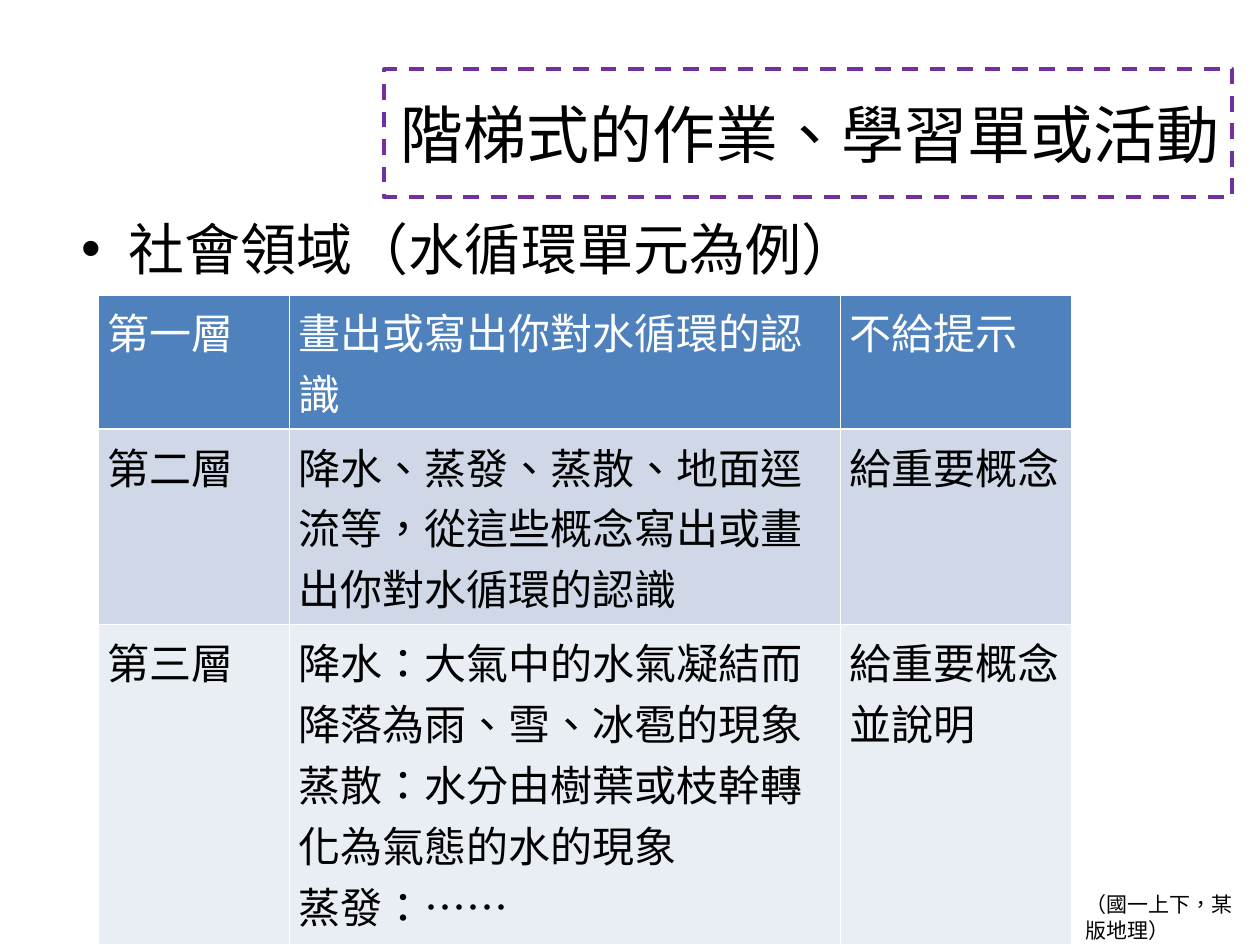
"""Build a slide on tiered assignments with a three-level water cycle table."""
from lxml.etree import SubElement
from pptx import Presentation
from pptx.dml.color import RGBColor
from pptx.enum.dml import MSO_LINE
from pptx.enum.text import MSO_ANCHOR, MSO_AUTO_SIZE, PP_ALIGN
from pptx.oxml.ns import qn
from pptx.util import Inches, Pt

THEME = {
    "font": "Noto Sans CJK SC",
    "note_font": "Arial",
    "title": 36,
    "topic": 32,
    "cell": 24,
    "note": 12,
    "ink": "000000",
    "header_ink": "FFFFFF",
    "frame": "7030A0",
    "fills": ["4F81BD", "D0D8E8", "E9EDF4"],
}


def style_text(frame, size, color=THEME["ink"], font=THEME["font"]):
    """Format every run in a text frame as Traditional Chinese."""
    for para in frame.paragraphs:
        for span in para.runs:
            span.font.size = Pt(size)
            span.font.bold = False
            span.font.name = font
            span.font.color.rgb = RGBColor.from_string(color)
            span.font._element.set("lang", "zh-TW")
            SubElement(span.font._element, qn("a:ea"), typeface=font)


def grid(*lengths):
    """Turn grid units, 100 columns by 75 rows to the slide, into lengths."""
    return [int(length * unit) for length in lengths]


deck = Presentation()
deck.slide_width, deck.slide_height = Inches(10), Inches(7.5)
unit = deck.slide_width / 100
page = deck.slides.add_slide(deck.slide_layouts[5])

title = page.shapes.title
title.left, title.top, title.width, title.height = grid(30.5, 5.5, 67.3, 10.15)
title.line.color.rgb = RGBColor.from_string(THEME["frame"])
title.line.width = Pt(2.25)
title.line.dash_style = MSO_LINE.DASH
title.text_frame.text = "階梯式的作業、學習單或活動"
title.text_frame.auto_size = MSO_AUTO_SIZE.NONE
title.text_frame.vertical_anchor = MSO_ANCHOR.MIDDLE
title.text_frame.paragraphs[0].alignment = PP_ALIGN.RIGHT
style_text(title.text_frame, THEME["title"])

topic = page.shapes.add_textbox(*grid(5.45, 16.5, 90, 48))
topic.text_frame.word_wrap = True
topic.text_frame.text = "社會領域（水循環單元為例）"
bullet = topic.text_frame.paragraphs[0]._p.get_or_add_pPr()
bullet.set("marL", str(Inches(0.38)))
bullet.set("indent", str(-Inches(0.38)))
SubElement(bullet, qn("a:buFont"), typeface="Arial")
SubElement(bullet, qn("a:buChar"), char="•")
style_text(topic.text_frame, THEME["topic"])

levels = [
    ["第一層", "畫出或寫出你對水循環的認識", "不給提示"],
    ["第二層", "降水、蒸發、蒸散、地面逕流等，從這些概念寫出或畫出你對水循環的認識", "給重要概念"],
    [
        "第三層",
        "降水：大氣中的水氣凝結而降落為雨、雪、冰雹的現象\n"
        "蒸散：水分由樹葉或枝幹轉化為氣態的水的現象\n"
        "蒸發：……",
        "給重要概念並說明",
    ],
]
table = page.shapes.add_table(3, 3, *grid(7.8, 23.4, 77.3, 51.6)).table
for column, width in zip(table.columns, grid(15.2, 43.7, 18.4)):
    column.width = width
for row, height in zip(table.rows, grid(10.65, 15.5, 25.45)):
    row.height = height
for row_index, level in enumerate(levels):
    ink = THEME["ink"] if row_index else THEME["header_ink"]
    for column_index, words in enumerate(level):
        cell = table.cell(row_index, column_index)
        cell.margin_left = cell.margin_right = Inches(0.07)
        cell.margin_top = cell.margin_bottom = Inches(0.05)
        cell.fill.solid()
        cell.fill.fore_color.rgb = RGBColor.from_string(THEME["fills"][row_index])
        cell.text_frame.text = words
        style_text(cell.text_frame, THEME["cell"], ink)

note = page.shapes.add_textbox(*grid(85.2, 70.3, 14.8, 5))
note.text_frame.word_wrap = True
note.text_frame.auto_size = MSO_AUTO_SIZE.SHAPE_TO_FIT_TEXT
note.text_frame.text = "（國一上下，某版地理）"
style_text(note.text_frame, THEME["note"], font=THEME["note_font"])

deck.save("out.pptx")
